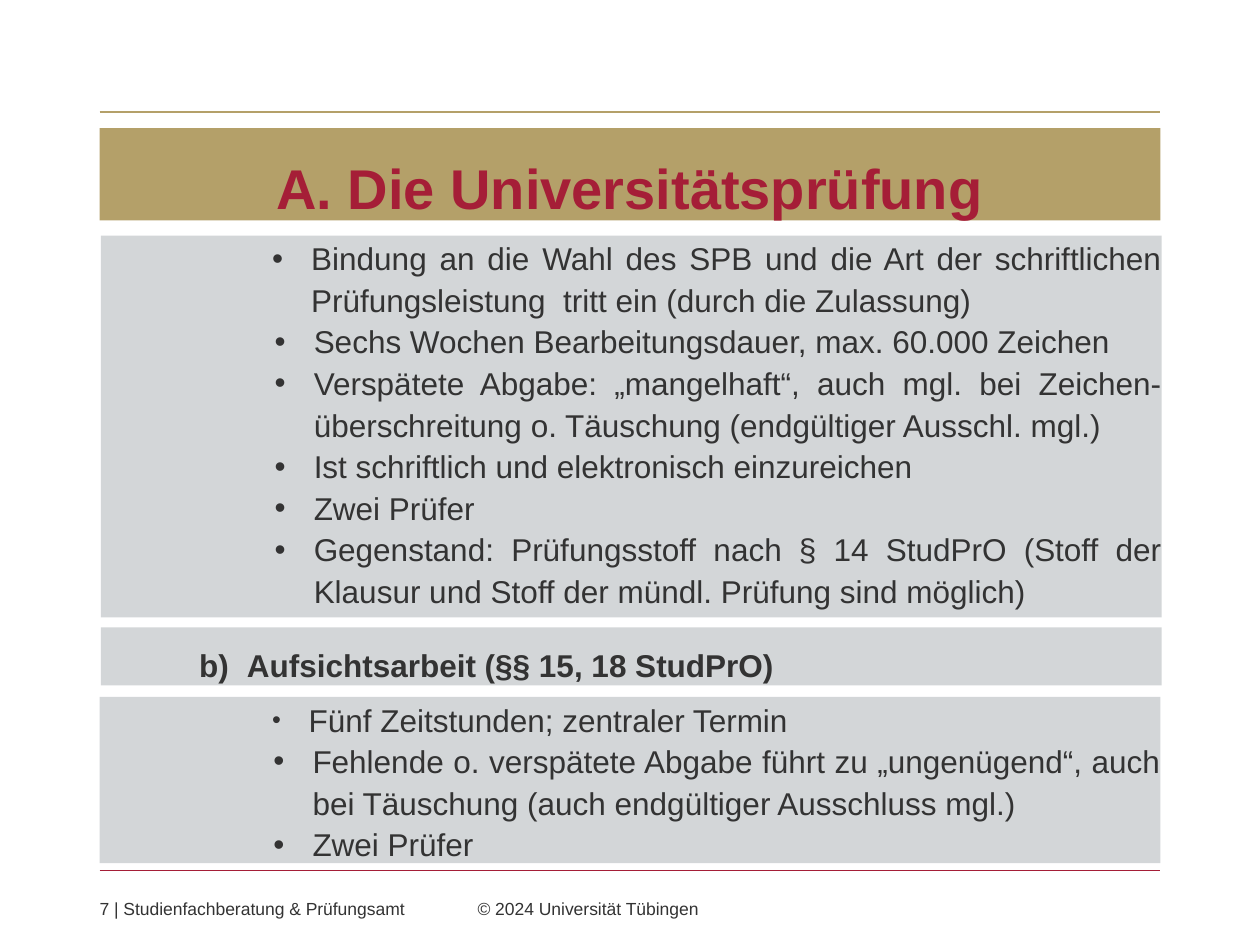
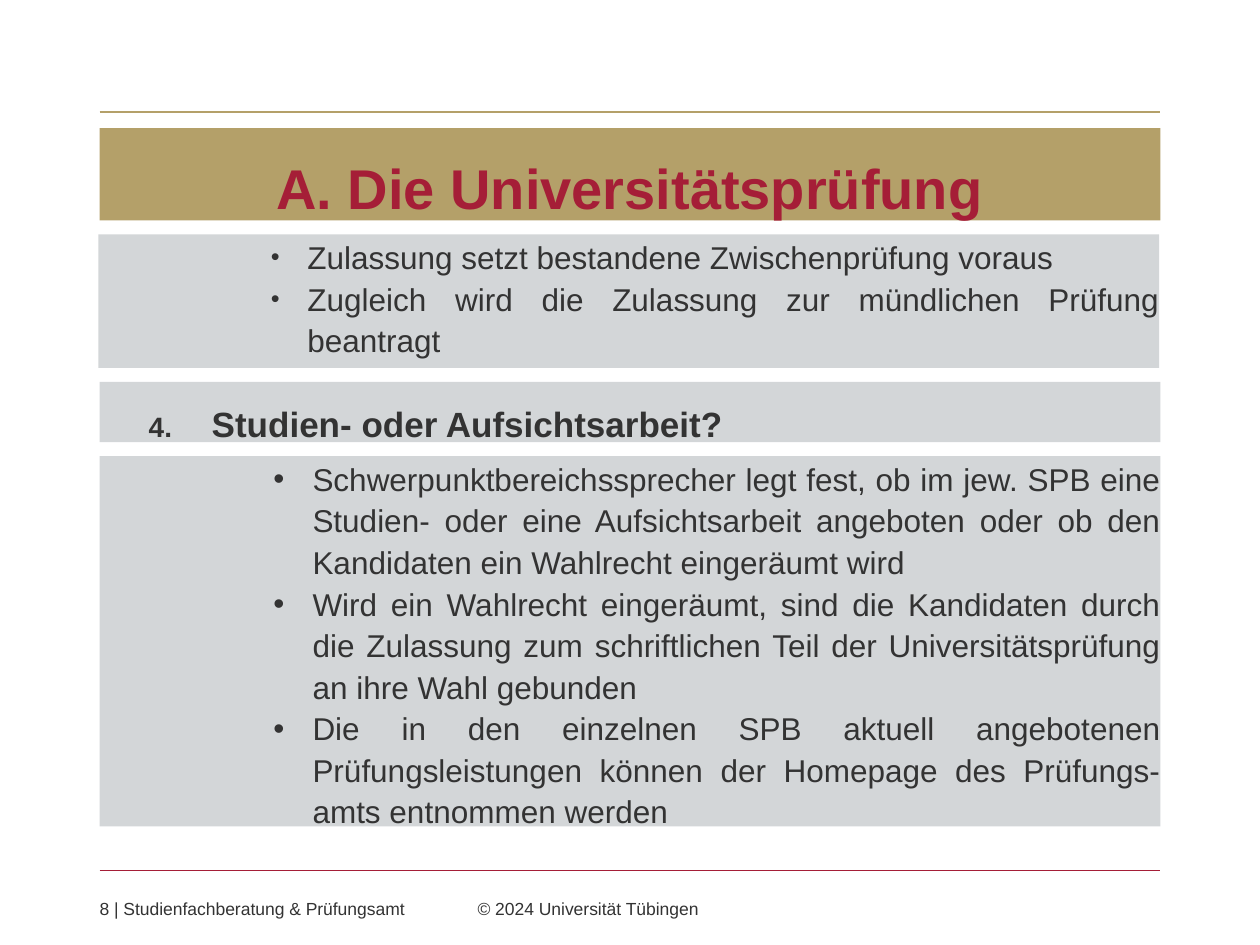
from dataclasses import dataclass

from lxml import etree
from pptx import Presentation
from pptx.dml.color import RGBColor
from pptx.enum.shapes import MSO_CONNECTOR, MSO_SHAPE
from pptx.enum.text import MSO_ANCHOR, MSO_AUTO_SIZE, PP_ALIGN
from pptx.oxml.ns import qn
from pptx.util import Inches, Pt

LEFT, CENTER, JUSTIFY = PP_ALIGN.LEFT, PP_ALIGN.CENTER, PP_ALIGN.JUSTIFY
TOP, BOTTOM = MSO_ANCHOR.TOP, MSO_ANCHOR.BOTTOM
FIXED, GROW = MSO_AUTO_SIZE.NONE, MSO_AUTO_SIZE.SHAPE_TO_FIT_TEXT
STRAIGHT, RECTANGLE = MSO_CONNECTOR.STRAIGHT, MSO_SHAPE.RECTANGLE
TITLE_ONLY = 5

# Grid of 100 columns by 75 rows; the content spans MARGIN to MARGIN + SPAN
COLUMNS, ROWS = 100, 75
MARGIN, SPAN = 7.9, 84.2


@dataclass(frozen=True)
class Theme:
    font: str = "Arial"
    gold: RGBColor = RGBColor(0xB4, 0xA0, 0x69)
    crimson: RGBColor = RGBColor(0xA5, 0x1E, 0x37)
    gray: RGBColor = RGBColor(0xD3, 0xD6, 0xD8)
    ink: RGBColor = RGBColor(0x33, 0x33, 0x33)
    title_size: int = 32
    section_size: int = 20
    body_size: int = 18
    footer_size: int = 10
    rule_width: float = 0.75


@dataclass(frozen=True)
class ListStyle:
    """Indents in inches, bullet size in percent, numbering as (type, start)."""
    level: int
    indent: float
    hanging: float
    bullet_size: int = 100
    numbering: tuple = ()
    tab: float = 0


FIRST_POINT = ListStyle(0, 1.67, 0.31)
POINT = ListStyle(2, 1.69, 0.31)
SMALL_POINT = ListStyle(1, 1.66, 0.29, bullet_size=80)
LETTER_B = ListStyle(2, 1.16, 0.38, numbering=("alphaLcParenR", 2), tab=0.49)
NUMBER_4 = ListStyle(1, 0.89, 0.5, 80, ("arabicPeriod", 4), 0.49)


def apply(target, values):
    for name, value in values.items():
        setattr(target, name, value)


def add_element(parent, tag, **attributes):
    element = etree.SubElement(parent, qn(tag))
    for name, value in attributes.items():
        element.set(name, str(value))
    return element


class Deck:
    def __init__(self, theme):
        self.theme = theme
        self.presentation = Presentation()
        apply(self.presentation, {"slide_width": Inches(10), "slide_height": Inches(7.5)})
        self.slide = None

    def column(self, count):
        return round(self.presentation.slide_width * count / COLUMNS)

    def row(self, count):
        return round(self.presentation.slide_height * count / ROWS)

    def box(self, left, top, width, height):
        return self.column(left), self.row(top), self.column(width), self.row(height)

    # Text
    def format_frame(self, frame, anchor=TOP, auto_size=FIXED):
        apply(frame, {"margin_left": 0, "margin_top": 0, "margin_right": 0,
                      "margin_bottom": 0, "word_wrap": True,
                      "vertical_anchor": anchor, "auto_size": auto_size})

    def add_text(self, paragraph, text, size, color, bold=False, align=LEFT, spacing=1.0):
        apply(paragraph, {"alignment": align, "line_spacing": spacing})
        run = paragraph.add_run()
        run.text = text
        apply(run.font, {"name": self.theme.font, "size": Pt(size), "bold": bold})
        run.font.color.rgb = color

    def add_tab(self, paragraph, position):
        tabs = add_element(paragraph._p.get_or_add_pPr(), "a:tabLst")
        add_element(tabs, "a:tab", pos=Inches(position), algn="l")

    def mark(self, paragraph, style):
        paragraph.level = style.level
        properties = paragraph._p.get_or_add_pPr()
        properties.set("marL", str(Inches(style.indent)))
        properties.set("indent", str(-Inches(style.hanging)))
        add_element(properties, "a:buSzPct", val=style.bullet_size * 1000)
        add_element(properties, "a:buFont", typeface=self.theme.font)
        if style.numbering:
            kind, start = style.numbering
            add_element(properties, "a:buAutoNum", type=kind, startAt=start)
        else:
            add_element(properties, "a:buChar", char="•")
        if style.tab:
            self.add_tab(paragraph, style.tab)

    # Shared frame of every slide
    def add_slide(self, title, number, footer, copyright_line):
        layout = self.presentation.slide_layouts[TITLE_ONLY]
        self.slide = self.presentation.slides.add_slide(layout)
        self.add_rule(8.9, self.theme.gold)
        self.add_rule(69.1, self.theme.crimson)
        self.add_title(title)
        self.add_footer(f"{number} | {footer}\t{copyright_line}")

    def add_rule(self, top, color):
        start, end, height = self.column(MARGIN), self.column(MARGIN + SPAN), self.row(top)
        rule = self.slide.shapes.add_connector(STRAIGHT, start, height, end, height)
        apply(rule.line, {"width": Pt(self.theme.rule_width)})
        rule.line.color.rgb = color
        add_element(rule._element.spPr, "a:effectLst")

    def add_title(self, text):
        title = self.slide.shapes.title
        names = ("left", "top", "width", "height")
        apply(title, dict(zip(names, self.box(MARGIN, 10.4, SPAN, 7.1))))
        title.fill.solid()
        title.fill.fore_color.rgb = self.theme.gold
        self.format_frame(title.text_frame, BOTTOM, GROW)
        self.add_text(title.text_frame.paragraphs[0], text, self.theme.title_size,
                      self.theme.crimson, True, CENTER, 1.5)

    def add_footer(self, text):
        footer = self.slide.shapes.add_textbox(*self.box(MARGIN, 71.3, SPAN, 1.7))
        self.format_frame(footer.text_frame, auto_size=GROW)
        paragraph = footer.text_frame.paragraphs[0]
        self.add_tab(paragraph, 3)
        self.add_text(paragraph, text, self.theme.footer_size, self.theme.ink)

    # Gray panels
    def add_panel(self, top, height, left=MARGIN):
        panel = self.slide.shapes.add_shape(RECTANGLE, *self.box(left, top, SPAN, height))
        panel.shadow.inherit = False
        panel.fill.solid()
        panel.fill.fore_color.rgb = self.theme.gray
        panel.line.fill.background()
        self.format_frame(panel.text_frame)
        return panel.text_frame

    def add_heading(self, text, style, size, top, height, left=MARGIN):
        paragraph = self.add_panel(top, height, left).paragraphs[0]
        self.mark(paragraph, style)
        self.add_text(paragraph, text, size, self.theme.ink, True, spacing=1.5)

    def add_points(self, points, top, height, left=MARGIN):
        frame = self.add_panel(top, height, left)
        for index, (style, text) in enumerate(points):
            paragraph = frame.add_paragraph() if index else frame.paragraphs[0]
            self.mark(paragraph, style)
            self.add_text(paragraph, text, self.theme.body_size, self.theme.ink,
                          align=JUSTIFY, spacing=1.1)


TITLE = "A. Die Universitätsprüfung"
FOOTER = "Studienfachberatung & Prüfungsamt"
COPYRIGHT = "© 2024 Universität Tübingen"

THESIS_POINTS = [
    (FIRST_POINT, "Bindung an die Wahl des SPB und die Art der schriftlichen "
                  "Prüfungsleistung  tritt ein (durch die Zulassung)"),
    (POINT, "Sechs Wochen Bearbeitungsdauer, max. 60.000 Zeichen"),
    (POINT, "Verspätete Abgabe: „mangelhaft“, auch mgl. bei Zeichen-überschreitung "
            "o. Täuschung (endgültiger Ausschl. mgl.)"),
    (POINT, "Ist schriftlich und elektronisch einzureichen"),
    (POINT, "Zwei Prüfer"),
    (POINT, "Gegenstand: Prüfungsstoff nach § 14 StudPrO (Stoff der Klausur und "
            "Stoff der mündl. Prüfung sind möglich)"),
]
EXAM_POINTS = [
    (SMALL_POINT, "Fünf Zeitstunden; zentraler Termin"),
    (POINT, "Fehlende o. verspätete Abgabe führt zu „ungenügend“, auch bei "
            "Täuschung (auch endgültiger Ausschluss mgl.)"),
    (POINT, "Zwei Prüfer"),
]
ADMISSION_POINTS = [
    (SMALL_POINT, "Zulassung setzt bestandene Zwischenprüfung voraus"),
    (SMALL_POINT, "Zugleich wird die Zulassung zur mündlichen Prüfung beantragt"),
]
CHOICE_POINTS = [
    (POINT, "Schwerpunktbereichssprecher legt fest, ob im jew. SPB eine Studien- "
            "oder eine Aufsichtsarbeit angeboten oder ob den Kandidaten ein "
            "Wahlrecht eingeräumt wird"),
    (POINT, "Wird ein Wahlrecht eingeräumt, sind die Kandidaten durch die Zulassung "
            "zum schriftlichen Teil der Universitätsprüfung an ihre Wahl gebunden"),
    (POINT, "Die in den einzelnen SPB aktuell angebotenen Prüfungsleistungen können "
            "der Homepage des Prüfungs-amts entnommen werden"),
]


def main():
    theme = Theme()
    deck = Deck(theme)

    # Thesis and supervised exam
    deck.add_slide(TITLE, 7, FOOTER, COPYRIGHT)
    deck.add_points(THESIS_POINTS, 18.7, 30.3, left=8)
    deck.add_heading("Aufsichtsarbeit (§§ 15, 18 StudPrO)", LETTER_B,
                     theme.body_size, 49.8, 4.6, left=8)
    deck.add_points(EXAM_POINTS, 55.3, 13.2)

    # Admission and choice of exam form
    deck.add_slide(TITLE, 8, FOOTER, COPYRIGHT)
    deck.add_points(ADMISSION_POINTS, 18.6, 10.6, left=7.8)
    deck.add_heading("Studien- oder Aufsichtsarbeit?", NUMBER_4,
                     theme.section_size, 30.3, 4.8)
    deck.add_points(CHOICE_POINTS, 36.2, 29.4)

    deck.presentation.save("out.pptx")


if __name__ == "__main__":
    main()
